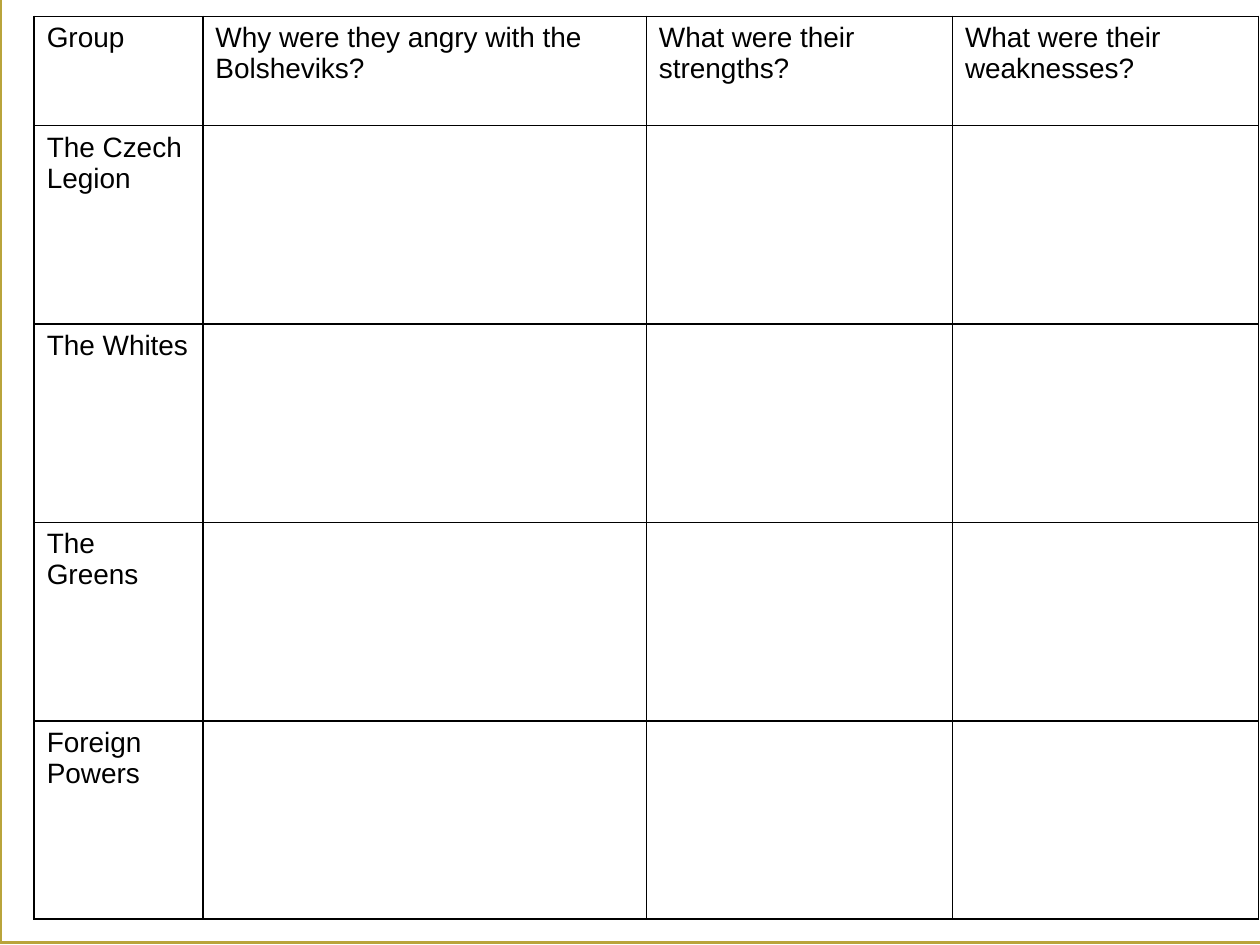
from lxml.etree import SubElement
from pptx import Presentation
from pptx.dml.color import RGBColor
from pptx.enum.shapes import MSO_SHAPE
from pptx.oxml.ns import qn
from pptx.util import Cm, Pt

HEADINGS = [
    "Group",
    "Why were they angry with the Bolsheviks?",
    "What were their strengths?",
    "What were their weaknesses?",
]
GROUPS = ["The Czech Legion", "The Whites", "The Greens", "Foreign Powers"]
COLUMN_WIDTHS = [3.4, 8.94, 6.17, 6.17]
HEADING_HEIGHT = 2.2
GROUP_HEIGHT = 4
INK = "000000"


def color(hex_code):
    return RGBColor.from_string(hex_code)


def write(text_frame, text, *, size=16, font="Arial", ink=INK):
    paragraph = text_frame.paragraphs[0]
    paragraph.font.size = Pt(size)
    if text:
        run = paragraph.add_run()
        run.text = text
        run.font.size = Pt(size)
        run.font.name = font
        run.font.color.rgb = color(ink)


def add_frame(slide):
    frame = slide.shapes.add_shape(
        MSO_SHAPE.RECTANGLE, Cm(0), Cm(-0.05), Cm(25.91), Cm(19.05)
    )
    frame.shadow.inherit = False
    frame.fill.solid()
    frame.fill.fore_color.rgb = color("FFFFFF")
    frame.line.color.rgb = color("B9A43B")
    frame.line.width = Pt(2)


def rule_cell(cell, *, width=1, ink=INK):
    properties = cell._tc.get_or_add_tcPr()
    for side in ("lnL", "lnR", "lnT", "lnB"):
        edge = SubElement(properties, qn(f"a:{side}"), w=str(Pt(width)))
        fill = SubElement(edge, qn("a:solidFill"))
        SubElement(fill, qn("a:srgbClr"), val=ink)
    cell.fill.background()


def add_worksheet(slide):
    rows = [HEADINGS] + [[group, "", "", ""] for group in GROUPS]
    heights = [HEADING_HEIGHT] + [GROUP_HEIGHT] * len(GROUPS)
    worksheet = slide.shapes.add_table(
        len(rows), len(HEADINGS), Cm(0.69), Cm(0.33),
        Cm(sum(COLUMN_WIDTHS)), Cm(sum(heights)),
    ).table
    worksheet.first_row = False
    worksheet.horz_banding = False
    for column, width in zip(worksheet.columns, COLUMN_WIDTHS):
        column.width = Cm(width)
    for row, height, texts in zip(worksheet.rows, heights, rows):
        row.height = Cm(height)
        for cell, text in zip(row.cells, texts):
            rule_cell(cell)
            write(cell.text_frame, text)


def main():
    presentation = Presentation()
    presentation.slide_width = Cm(25.4)
    presentation.slide_height = Cm(19.05)
    slide = presentation.slides.add_slide(presentation.slide_layouts[6])
    add_frame(slide)
    add_worksheet(slide)
    presentation.save("out.pptx")


if __name__ == "__main__":
    main()
